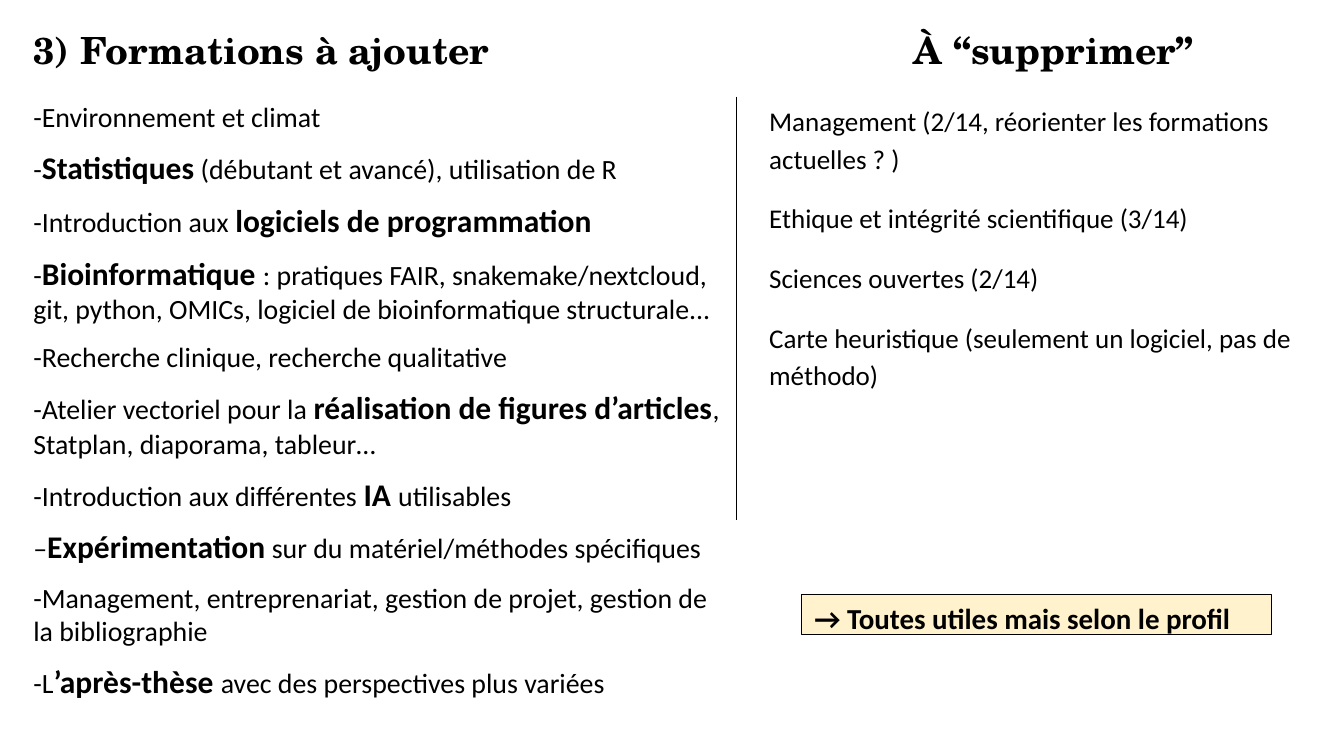
from lxml.etree import SubElement
from pptx import Presentation
from pptx.dml.color import RGBColor
from pptx.enum.shapes import MSO_CONNECTOR, MSO_SHAPE
from pptx.enum.text import MSO_ANCHOR, MSO_AUTO_SIZE, PP_ALIGN
from pptx.oxml.ns import qn
from pptx.util import Pt

COLORS = {"text": "000000", "line": "000000", "highlight": "FFF2CC"}
TITLE_FONT = "TeX Gyre Schola"
BODY_FONT = "Calibri"
INSET = 9.4
TITLE_ONLY_LAYOUT = 5

# Bold passages stand between asterisks
COURSES_TO_ADD = [
    "-Environnement et climat",
    "-*Statistiques* (débutant et avancé), utilisation de R",
    "-Introduction aux *logiciels de programmation*",
    "-*Bioinformatique *: pratiques FAIR, snakemake/nextcloud, git, python, "
    "OMICs, logiciel de bioinformatique structurale...",
    "-Recherche clinique, recherche qualitative",
    "-Atelier vectoriel pour la *réalisation de figures d’articles*"
    ", Statplan, diaporama, tableur…",
    "-Introduction aux différentes *IA *utilisables",
    "–*Expérimentation* sur du matériel/méthodes spécifiques",
    "-Management, entreprenariat, gestion de projet, gestion de la bibliographie",
    "-L*’après-thèse *avec des perspectives plus variées",
]
COURSES_TO_REMOVE = [
    "Management (2/14, réorienter les formations actuelles ? )",
    "Ethique et intégrité scientifique (3/14)",
    "Sciences ouvertes (2/14)",
    "Carte heuristique (seulement un logiciel, pas de méthodo)",
]


def color(name):
    return RGBColor.from_string(COLORS[name])


def style_font(font, name, size, bold=False):
    font.name = name
    font.size = Pt(size)
    font.bold = bold
    font.color.rgb = color("text")


def prepare_frame(shape, anchor=MSO_ANCHOR.TOP):
    frame = shape.text_frame
    frame.word_wrap = True
    frame.auto_size = MSO_AUTO_SIZE.NONE
    frame.vertical_anchor = anchor
    frame.margin_left = frame.margin_right = Pt(INSET)
    frame.margin_top = frame.margin_bottom = Pt(INSET)
    return frame


def set_title(slide, text, tab_position):
    title = slide.shapes.title
    title.left, title.top, title.width, title.height = Pt(14.4), Pt(10), Pt(945.6), Pt(52)
    frame = prepare_frame(title)
    frame.text = text
    paragraph = frame.paragraphs[0]
    paragraph.alignment = PP_ALIGN.LEFT
    paragraph.line_spacing = 1.0
    tabs = SubElement(paragraph._p.get_or_add_pPr(), qn("a:tabLst"))
    SubElement(tabs, qn("a:tab"), pos=str(Pt(tab_position)), algn="l")
    for run in paragraph.runs:
        style_font(run.font, TITLE_FONT, 26.7, bold=True)


def add_list(slide, box, items, size, gap, line_spacing=1.0, bold_size=22.5):
    shape = slide.shapes.add_textbox(*map(Pt, box))
    frame = prepare_frame(shape)
    for index, item in enumerate(items):
        paragraph = frame.add_paragraph() if index else frame.paragraphs[0]
        paragraph.line_spacing = line_spacing
        if index:
            paragraph.space_before = Pt(gap)
        for position, part in enumerate(item.split("*")):
            if part:
                bold = position % 2 == 1
                run = paragraph.add_run()
                run.text = part
                style_font(run.font, BODY_FONT, bold_size if bold else size, bold)


def add_callout(slide, box, text):
    shape = slide.shapes.add_shape(MSO_SHAPE.RECTANGLE, *map(Pt, box))
    shape.shadow.inherit = False
    shape.fill.solid()
    shape.fill.fore_color.rgb = color("highlight")
    shape.line.color.rgb = color("line")
    shape.line.width = Pt(0.75)
    frame = prepare_frame(shape, MSO_ANCHOR.MIDDLE)
    frame.text = text
    paragraph = frame.paragraphs[0]
    paragraph.alignment = PP_ALIGN.LEFT
    paragraph.line_spacing = 1.15
    style_font(paragraph.runs[0].font, BODY_FONT, 20.7, bold=True)


def add_divider(slide, x, top, bottom):
    line = slide.shapes.add_connector(
        MSO_CONNECTOR.STRAIGHT, Pt(x), Pt(top), Pt(x), Pt(bottom))
    line.line.color.rgb = color("line")
    line.line.width = Pt(0.75)
    SubElement(line._element.spPr, qn("a:effectLst"))


def main():
    presentation = Presentation()
    presentation.slide_width = Pt(960)
    presentation.slide_height = Pt(540)
    slide = presentation.slides.add_slide(presentation.slide_layouts[TITLE_ONLY_LAYOUT])

    # Headings of both columns
    set_title(slide, "3) Formations à ajouter\tÀ “supprimer”", tab_position=629)

    # Columns and the line between them
    add_list(slide, (14.4, 62, 514, 358.6), COURSES_TO_ADD, size=19.9, gap=10.7)
    add_list(slide, (540, 62, 420, 288.7), COURSES_TO_REMOVE, size=19.3, gap=16,
             line_spacing=1.15)
    add_divider(slide, 526.3, 69.1, 371.5)

    # Conclusion
    add_callout(slide, (572.4, 424.8, 336.2, 28.8), "→ Toutes utiles mais selon le profil")

    presentation.save("out.pptx")


if __name__ == "__main__":
    main()
